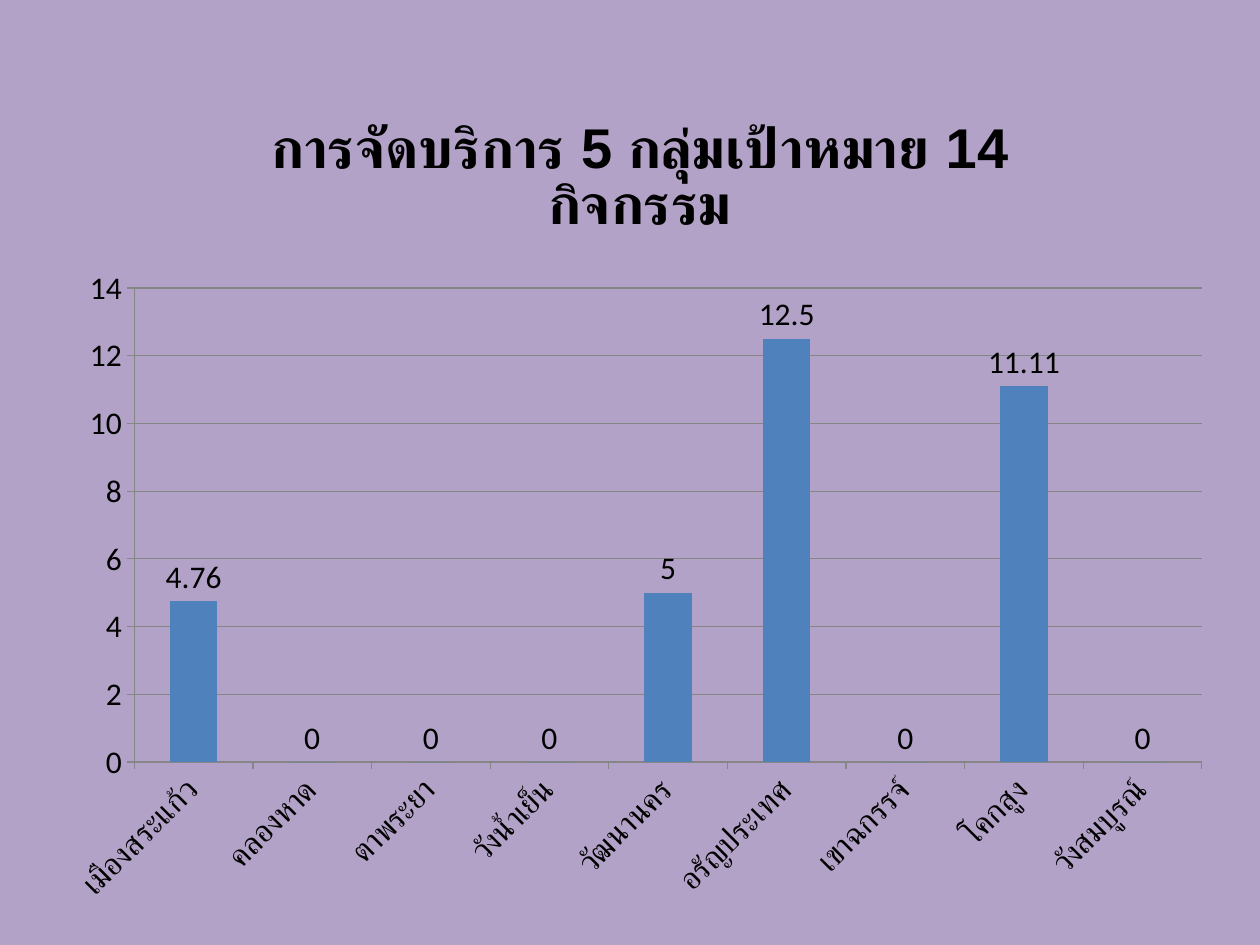
import pptx
import pptx.chart.data
import pptx.dml.color
import pptx.enum.chart
import pptx.oxml
import pptx.oxml.ns
import pptx.util

Inches = pptx.util.Inches
Pt = pptx.util.Pt
COLORS = {"background": "B3A2C7", "bar": "4F81BD", "line": "868686", "text": "000000"}
TITLE = "การจัดบริการ 5 กลุ่มเป้าหมาย 14 กิจกรรม"
RESULTS = {
    "เมืองสระแก้ว": 4.76,
    "คลองหาด": 0,
    "ตาพระยา": 0,
    "วังน้ำเย็น": 0,
    "วัฒนานคร": 5,
    "อรัญประเทศ": 12.5,
    "เขาฉกรรจ์": 0,
    "โคกสูง": 11.11,
    "วังสมบูรณ์": 0,
}


def rgb(name):
    return pptx.dml.color.RGBColor.from_string(COLORS[name])


def set_fill(fill, color):
    fill.solid()
    fill.fore_color.rgb = rgb(color)


def set_values(obj, values):
    for name, value in values.items():
        setattr(obj, name, value)


def set_font(font, **values):
    set_values(font, values)
    font.color.rgb = rgb("text")


def set_line(fmt):
    set_values(fmt.line, {"width": Pt(0.7)})
    fmt.line.color.rgb = rgb("line")


def set_layout(parent, before, target=None, **percents):
    """Place a chart part by percentages of the chart area, ahead of a child tag."""
    items = [("layoutTarget", target)] if target else []
    items += [(f"{key}Mode", "edge") for key in ("x", "y")]
    items += [(key, f"{value / 100:.4f}") for key, value in percents.items()]
    body = "".join(f'<c:{tag} val="{value}"/>' for tag, value in items)
    layout = pptx.oxml.parse_xml(
        f'<c:layout {pptx.oxml.ns.nsdecls("c")}><c:manualLayout>{body}'
        "</c:manualLayout></c:layout>"
    )
    for old in parent.findall(pptx.oxml.ns.qn("c:layout")):
        parent.remove(old)
    parent.find(pptx.oxml.ns.qn(before)).addprevious(layout)


def add_results_chart(s):
    data = pptx.chart.data.CategoryChartData()
    data.categories = list(RESULTS)
    data.add_series(TITLE, list(RESULTS.values()))
    kind = pptx.enum.chart.XL_CHART_TYPE.COLUMN_CLUSTERED
    box = [Inches(n) for n in (0.43, 0.6, 9.29, 6.69)]
    chart = s.shapes.add_chart(kind, *box, data).chart
    chart.has_legend = False
    set_font(chart.font, name="Calibri", size=Pt(18))
    return chart


def format_title(chart):
    tf = chart.chart_title.text_frame
    tf.text = TITLE
    set_font(tf.paragraphs[0].runs[0].font, name="Arial", size=Pt(32), bold=True)
    chart.chart_title.include_in_layout = False
    set_layout(chart.chart_title._element, "c:overlay", x=17.7, y=2.9)


def format_axes(chart):
    outside = pptx.enum.chart.XL_TICK_MARK.OUTSIDE
    for axis in (chart.category_axis, chart.value_axis):
        set_values(axis, {"major_tick_mark": outside,
                          "minor_tick_mark": pptx.enum.chart.XL_TICK_MARK.NONE})
        set_font(axis.tick_labels.font, name="Calibri", size=Pt(18))
        set_line(axis.format)
    set_values(chart.value_axis, {"minimum_scale": 0, "maximum_scale": 14,
                                  "major_unit": 2, "has_major_gridlines": True})
    set_line(chart.value_axis.major_gridlines.format)
    text = chart.category_axis._element.find(pptx.oxml.ns.qn("c:txPr"))
    text.find(pptx.oxml.ns.qn("a:bodyPr")).set("rot", "-2700000")


def format_bars(chart):
    plot = chart.plots[0]
    set_values(plot, {"gap_width": 150, "vary_by_categories": False})
    bars = plot.series[0]
    set_fill(bars.format.fill, "bar")
    set_values(bars.data_labels, {
        "show_value": True,
        "position": pptx.enum.chart.XL_LABEL_POSITION.OUTSIDE_END,
    })
    set_font(bars.data_labels.font, name="Calibri", size=Pt(18))
    area = chart._chartSpace.chart.plotArea
    set_layout(area, "c:barChart", target="inner", x=6.85, y=25.2, w=91.2, h=56.25)


def main():
    prs = pptx.Presentation()
    set_values(prs, {"slide_width": Inches(10), "slide_height": Inches(7.5)})
    s = prs.slides.add_slide(prs.slide_layouts[6])
    set_fill(s.background.fill, "background")
    chart = add_results_chart(s)
    format_title(chart)
    format_axes(chart)
    format_bars(chart)
    prs.save("out.pptx")


if __name__ == "__main__":
    main()
